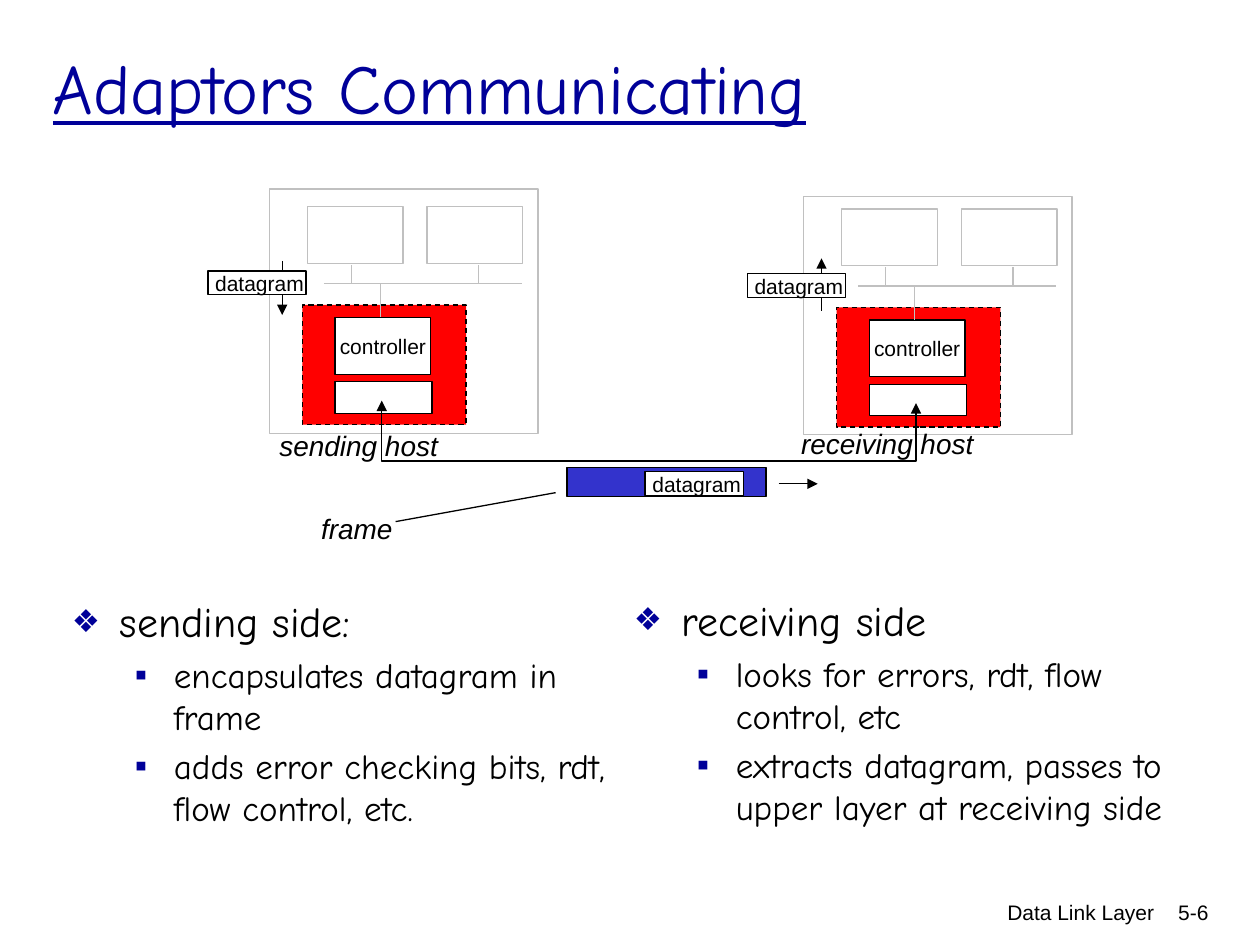
import dataclasses
import typing

import lxml.etree
import pptx
import pptx.dml.color
import pptx.enum.dml
import pptx.enum.shapes
import pptx.enum.text
import pptx.oxml.ns
import pptx.util

RGB = pptx.dml.color.RGBColor
ALIGN = pptx.enum.text.PP_ALIGN
ANCHOR = pptx.enum.text.MSO_ANCHOR
FIT = pptx.enum.text.MSO_AUTO_SIZE
DASH = pptx.enum.dml.MSO_LINE.DASH

BLACK = RGB(0x00, 0x00, 0x00)
WHITE = RGB(0xFF, 0xFF, 0xFF)
GRAY = RGB(0xC0, 0xC0, 0xC0)
RED = RGB(0xFF, 0x00, 0x00)
BLUE = RGB(0x33, 0x33, 0xCC)
NAVY = RGB(0x00, 0x00, 0x99)
SANS = "Arial"
HAND = "Comic Neue"
SCALE = 9144  # EMU in one px, 100 px to the inch


@dataclasses.dataclass
class Box:
    left: int
    top: int
    width: int
    height: int

    def move(self, dx: int, dy: int) -> "Box":
        return Box(self.left + dx, self.top + dy, self.width, self.height)

    def emu(self) -> list[int]:
        return [px(n) for n in dataclasses.astuple(self)]


@dataclasses.dataclass
class Host:
    frame: Box
    dx: int
    dy: int
    label: str
    spot: Box


@dataclasses.dataclass
class Level:
    size: int
    margin: int
    indent: int
    bullet: str
    percent: int


@dataclasses.dataclass
class Column:
    box: Box
    head: str
    items: list[str]


HOSTS = [
    Host(Box(214, 150, 213, 194), 0, 0, "sending host", Box(212, 335, 146, 37)),
    Host(Box(638, 156, 213, 189), 424, 2, "receiving host", Box(626, 334, 157, 37)),
]
LEVELS = [Level(24, 38, -38, "❖", 75), Level(20, 81, -31, "▪", 100)]
COLUMNS = [
    Column(Box(47, 468, 445, 212), "sending side:", [
        "encapsulates datagram in frame",
        "adds error checking bits, rdt, flow control, etc.",
    ]),
    Column(Box(493, 467, 447, 202), "receiving side", [
        "looks for errors, rdt, flow control, etc",
        "extracts datagram, passes to upper layer at receiving side",
    ]),
]


def px(count: int) -> int:
    return pptx.util.Emu(count * SCALE)


def add_node(parent: typing.Any, tag: str, **attrs: str) -> typing.Any:
    return lxml.etree.SubElement(parent, pptx.oxml.ns.qn(tag), attrs)


def add_run(para: typing.Any, text: str, size: int, font: str = SANS,
            color: RGB = BLACK) -> typing.Any:
    run = para.add_run()
    run.text = text
    run.font.size = pptx.util.Pt(size)
    run.font.name = font
    run.font.color.rgb = color
    return run


def add_rect(slide: typing.Any, box: Box, line: RGB = BLACK, fill: RGB = WHITE) -> typing.Any:
    rect = slide.shapes.add_shape(pptx.enum.shapes.MSO_SHAPE.RECTANGLE, *box.emu())
    rect.shadow.inherit = False
    rect.fill.solid()
    rect.fill.fore_color.rgb = fill
    rect.line.color.rgb = line
    rect.line.width = pptx.util.Pt(0.75)
    return rect


def style_line(shape: typing.Any, color: RGB, ends: str) -> None:
    """Colour a line and put arrowheads on the ends named in ends."""
    shape.line.color.rgb = color
    shape.line.width = pptx.util.Pt(0.75)
    line = shape.line._get_or_add_ln()
    for end in ends.split():
        add_node(line, f"a:{end}End", type="triangle")


def add_line(slide: typing.Any, x1: int, y1: int, x2: int, y2: int,
             color: RGB = BLACK, ends: str = "") -> None:
    line = slide.shapes.add_connector(
        pptx.enum.shapes.MSO_CONNECTOR.STRAIGHT, px(x1), px(y1), px(x2), px(y2))
    style_line(line, color, ends)
    add_node(line._element.spPr, "a:effectLst")


def add_label(slide: typing.Any, box: Box, text: str, size: int = 12,
              italic: bool = False) -> None:
    label = slide.shapes.add_textbox(*box.emu())
    label.text_frame.word_wrap = False
    label.text_frame.auto_size = FIT.SHAPE_TO_FIT_TEXT
    run = add_run(label.text_frame.paragraphs[0], text, size)
    run.font.italic = italic


def add_footer(slide: typing.Any, box: Box, text: str) -> None:
    note = slide.shapes.add_textbox(*box.emu())
    note.text_frame.word_wrap = True
    para = note.text_frame.paragraphs[0]
    para.alignment = ALIGN.RIGHT
    add_run(para, text, 12)


def add_gram(slide: typing.Any, left: int, top: int) -> None:
    """Draw a boxed datagram with its name."""
    add_rect(slide, Box(left, top, 78, 19))
    add_label(slide, Box(left - 4, top - 5, 94, 30), "datagram")


def add_host(slide: typing.Any, host: Host) -> None:
    dx, dy = host.dx, host.dy
    add_rect(slide, host.frame, GRAY)
    card = add_rect(slide, Box(240, 242, 130, 95).move(dx, dy), fill=RED)
    card.line.dash_style = DASH
    add_rect(slide, Box(266, 303, 77, 25).move(dx, dy))
    chip = add_rect(slide, Box(266, 252, 76, 45).move(dx, dy))
    chip.text_frame.word_wrap = False
    chip.text_frame.vertical_anchor = ANCHOR.MIDDLE
    para = chip.text_frame.paragraphs[0]
    para.alignment = ALIGN.CENTER
    add_run(para, "controller", 12)
    for left in (244, 339):
        add_rect(slide, Box(left, 164, 76, 45).move(dx, dy), GRAY)
    bus = 225 + dy
    add_line(slide, 257 + dx, bus, 414 + dx, bus, GRAY)
    for x, end in ((302, 252), (279, 210), (380, 210)):
        add_line(slide, x + dx, bus, x + dx, end + dy, GRAY)
    add_label(slide, host.spot, host.label, 16, True)


def add_link(slide: typing.Any) -> None:
    """Draw the wire between both hosts and the frame on it."""
    route = slide.shapes.build_freeform(303, 318, scale=SCALE)
    route.add_line_segments([(303, 366), (727, 366), (727, 320)], close=False)
    wire = route.convert_to_shape()
    wire.shadow.inherit = False
    wire.fill.background()
    style_line(wire, BLACK, "head tail")
    add_rect(slide, Box(450, 371, 158, 23), fill=BLUE)
    add_gram(slide, 512, 374)
    add_line(slide, 618, 384, 649, 384, ends="tail")
    add_label(slide, Box(245, 401, 77, 37), "frame", 16, True)
    add_line(slide, 314, 414, 441, 391)


def place(holder: typing.Any, box: Box, anchor: ANCHOR) -> typing.Any:
    holder.left, holder.top, holder.width, holder.height = box.emu()
    holder.text_frame.auto_size = FIT.NONE
    holder.text_frame.vertical_anchor = anchor
    return holder.text_frame


def fill_list(holder: typing.Any, column: Column) -> None:
    frame = place(holder, column.box, ANCHOR.TOP)
    for row, text in enumerate([column.head, *column.items]):
        para = frame.add_paragraph() if row else frame.paragraphs[0]
        para.level = min(row, 1)
        level = LEVELS[para.level]
        props = para._p.get_or_add_pPr()
        props.set("marL", str(px(level.margin)))
        props.set("indent", str(px(level.indent)))
        add_node(add_node(props, "a:buClr"), "a:srgbClr", val=str(NAVY))
        add_node(props, "a:buSzPct", val=str(level.percent * 1000))
        add_node(props, "a:buFont", typeface=SANS)
        add_node(props, "a:buChar", char=level.bullet)
        add_run(para, text, level.size, HAND)


def main() -> None:
    deck = pptx.Presentation()
    deck.slide_width, deck.slide_height = px(1000), px(750)
    slide = deck.slides.add_slide(deck.slide_layouts.get_by_name("Two Content"))
    title, *bodies = slide.placeholders
    para = place(title, Box(32, 6, 850, 125), ANCHOR.MIDDLE).paragraphs[0]
    para.alignment = ALIGN.LEFT
    add_run(para, "Adaptors Communicating", 40, HAND, NAVY).font.underline = True
    for holder, column in zip(bodies, COLUMNS):
        fill_list(holder, column)
    for host in HOSTS:
        add_host(slide, host)
    add_line(slide, 224, 207, 224, 250, ends="tail")
    add_gram(slide, 165, 215)
    add_line(slide, 652, 205, 652, 247, ends="head")
    add_gram(slide, 593, 217)
    add_link(slide)
    add_footer(slide, Box(609, 709, 317, 50), "Data Link Layer")
    add_footer(slide, Box(895, 709, 74, 50), "5-6")
    deck.save("out.pptx")


if __name__ == "__main__":
    main()
